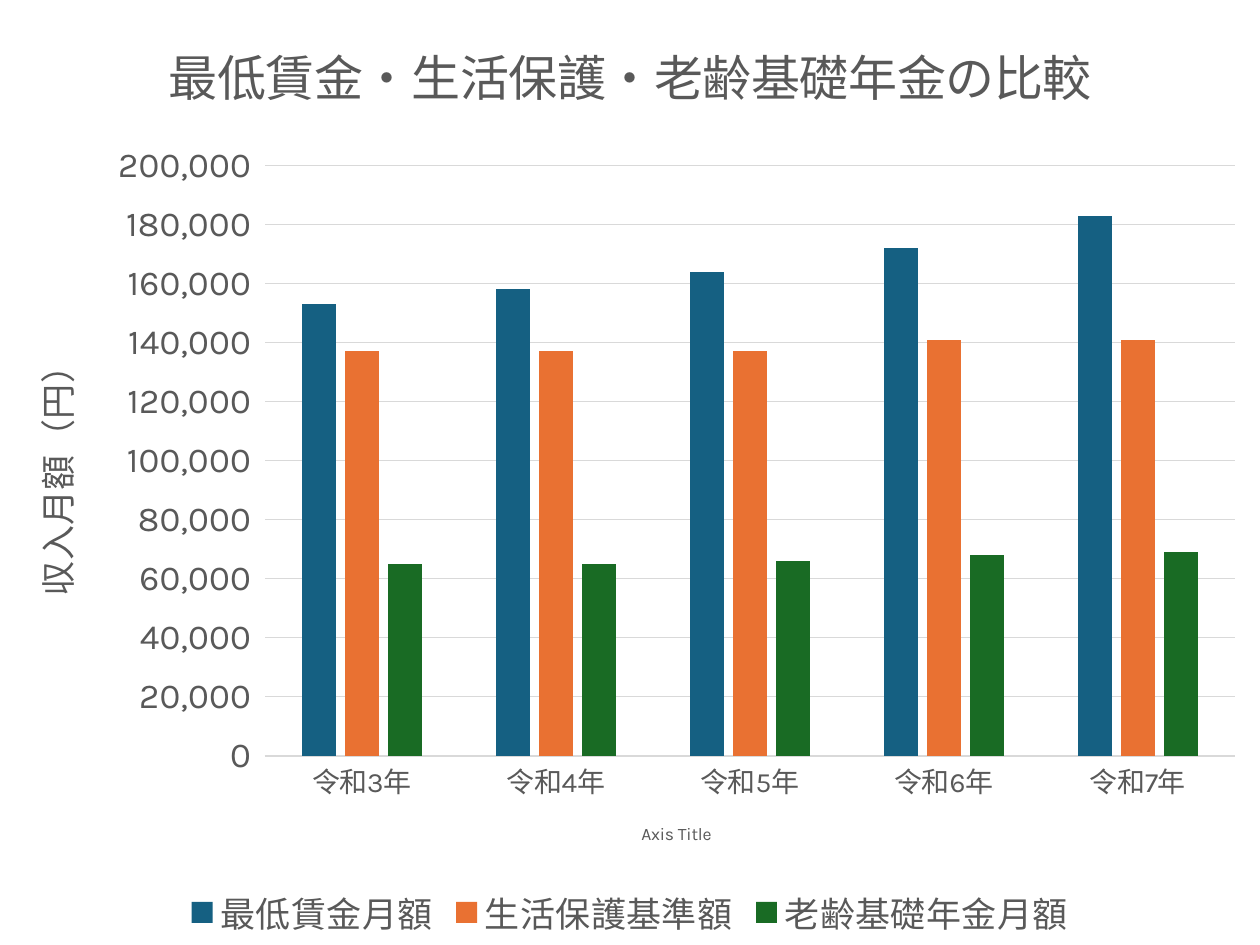
from dataclasses import dataclass

from lxml.etree import SubElement
from pptx import Presentation
from pptx.chart.data import CategoryChartData
from pptx.dml.color import RGBColor
from pptx.enum.chart import XL_CHART_TYPE as ChartType
from pptx.enum.chart import XL_LEGEND_POSITION as LegendPos
from pptx.enum.chart import XL_TICK_MARK as TickMark
from pptx.oxml.ns import qn
from pptx.util import Inches, Pt


@dataclass(frozen=True)
class Theme:
    font: str = "Karla"
    text: str = "595959"
    rule: str = "D9D9D9"
    rule_pt: float = 0.75
    title_pt: int = 28
    label_pt: int = 20
    category_pt: int = 16
    small_pt: int = 10


@dataclass(frozen=True)
class Series:
    name: str
    color: str
    values: tuple[int, ...]


THEME = Theme()
YEARS = [f"令和{n}年" for n in range(3, 8)]
SERIES = (
    Series("最低賃金月額", "156082", (153000, 158000, 164000, 172000, 183000)),
    Series("生活保護基準額", "E97132", (137000, 137000, 137000, 141000, 141000)),
    Series("老齢基礎年金月額", "196B24", (65000, 65000, 66000, 68000, 69000)),
)
PLOT_AREA = {"x": 0.21, "y": 0.175, "w": 0.77, "h": 0.625}


def style_font(font, size: float, color: str = THEME.text) -> None:
    font.name = THEME.font
    font.size = Pt(size)
    font.bold = False
    font.color.rgb = RGBColor.from_string(color)


def write_title(owner, text: str, *, size: float) -> None:
    """Give a chart or an axis a formatted title."""
    owner.has_title = True
    p = owner.chart_title.text_frame.paragraphs[0] if hasattr(
        owner, "chart_title") else owner.axis_title.text_frame.paragraphs[0]
    r = p.add_run()
    r.text = text
    style_font(r.font, size)


def style_line(line) -> None:
    line.color.rgb = RGBColor.from_string(THEME.rule)
    line.width = Pt(THEME.rule_pt)


def place_plot(chart, box: dict[str, float]) -> None:
    """Fix the inner plot area, in fractions of the chart."""
    area = chart.plots[0]._element.getparent()
    for old in area.findall(qn("c:layout")):
        area.remove(old)
    layout = SubElement(area, qn("c:layout"))
    area.insert(0, layout)
    manual = SubElement(layout, qn("c:manualLayout"))
    settings = {"layoutTarget": "inner", "xMode": "edge", "yMode": "edge", **box}
    for tag, value in settings.items():
        SubElement(manual, qn(f"c:{tag}")).set("val", str(value))


def style_axes(chart) -> None:
    years, amounts = chart.category_axis, chart.value_axis
    for axis, size in ((years, THEME.category_pt), (amounts, THEME.label_pt)):
        axis.major_tick_mark = axis.minor_tick_mark = TickMark.NONE
        style_font(axis.tick_labels.font, size)
    write_title(years, "Axis Title", size=THEME.small_pt)
    style_line(years.format.line)

    write_title(amounts, "収入月額（円）", size=THEME.label_pt)
    amounts.minimum_scale, amounts.maximum_scale = 0, 200000
    amounts.major_unit = 20000
    amounts.tick_labels.number_format = r"#,##0_);[Red]\(#,##0\)"
    amounts.tick_labels.number_format_is_linked = False
    amounts.format.line.fill.background()
    amounts.has_major_gridlines = True
    style_line(amounts.major_gridlines.format.line)


def add_income_chart(slide, width: int, height: int) -> None:
    data = CategoryChartData()
    data.categories = YEARS
    for s in SERIES:
        data.add_series(s.name, s.values)
    chart = slide.shapes.add_chart(
        ChartType.COLUMN_CLUSTERED, 0, 0, width, height, data).chart
    style_font(chart.font, THEME.small_pt, "000000")
    write_title(chart, "最低賃金・生活保護・老齢基礎年金の比較", size=THEME.title_pt)

    plot = chart.plots[0]
    plot.gap_width, plot.overlap = 219, -27
    plot.vary_by_categories = False
    for bars, s in zip(plot.series, SERIES):
        bars.format.fill.solid()
        bars.format.fill.fore_color.rgb = RGBColor.from_string(s.color)
    style_axes(chart)
    place_plot(chart, PLOT_AREA)

    chart.has_legend = True
    chart.legend.position = LegendPos.BOTTOM
    chart.legend.include_in_layout = False
    style_font(chart.legend.font, THEME.label_pt)


def main() -> None:
    prs = Presentation()
    prs.slide_width, prs.slide_height = Inches(10), Inches(7.5)
    slide = prs.slides.add_slide(prs.slide_layouts[6])
    add_income_chart(slide, prs.slide_width, prs.slide_height)
    prs.save("out.pptx")


if __name__ == "__main__":
    main()
